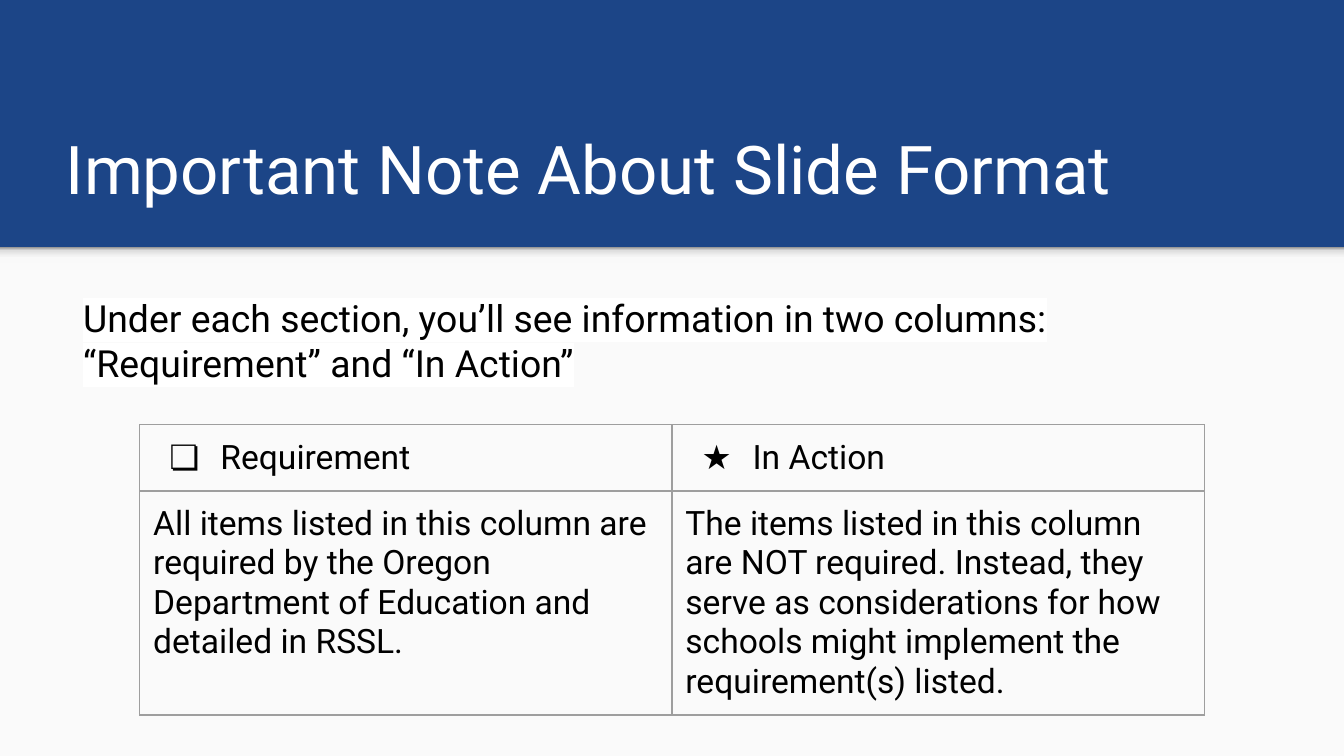
from dataclasses import dataclass

from lxml import etree
from pptx import Presentation
from pptx.dml.color import RGBColor
from pptx.enum.shapes import MSO_SHAPE
from pptx.enum.text import MSO_ANCHOR, MSO_AUTO_SIZE, PP_ALIGN
from pptx.oxml.ns import qn
from pptx.util import Inches, Pt

RECT = MSO_SHAPE.RECTANGLE
TOP, BOTTOM = MSO_ANCHOR.TOP, MSO_ANCHOR.BOTTOM
NO_FIT = MSO_AUTO_SIZE.NONE
LEFT = PP_ALIGN.LEFT


@dataclass(frozen=True)
class Theme:
    """Colours, font and sizes of the slide."""
    font: str = "Roboto"
    band: str = "1C4587"
    panel: str = "FAFAFA"
    white: str = "FFFFFF"
    black: str = "000000"
    border: str = "9E9E9E"
    shade: tuple = ((0, "F9F9F9"), (36, "F9F9F9"), (80, "DEDEDE"), (100, "999999"))
    title: int = 36
    body: int = 20
    cell: int = 18
    rule: float = 0.75
    inset: float = 0.1


THEME = Theme()
WIDTH = 10
HEIGHT = WIDTH * 9 / 16
TITLE = "Important Note About Slide Format"
INTRO = ("Under each section, you’ll see information in two columns: "
         "“Requirement” and “In Action”")
COLUMNS = [
    ("❏", "Requirement",
     "All items listed in this column are required by the Oregon Department of "
     "Education and detailed in RSSL."),
    ("★", "In Action",
     "The items listed in this column are NOT required. Instead, they serve as "
     "considerations for how schools might implement the requirement(s) listed."),
]


def set_attrs(obj, values):
    """Set every attribute named in values on obj."""
    for name, value in values.items():
        setattr(obj, name, value)


def add_node(parent, tag, **attrs):
    """Append a DrawingML element and return it."""
    return etree.SubElement(parent, qn(tag), attrs)


def add_solid(parent, tag, color):
    """Append a colour holder such as a:solidFill and return it."""
    node = add_node(parent, tag)
    add_node(node, "a:srgbClr", val=color)
    return node


def write_text(tf, text, size, color):
    """Write one left-aligned paragraph and return it with its run."""
    p = tf.paragraphs[0]
    p.alignment = LEFT
    r = p.add_run()
    r.text = text
    set_attrs(r.font, {"size": Pt(size), "name": THEME.font, "bold": False})
    r.font.color.rgb = RGBColor.from_string(color)
    return p, r


def format_frame(tf, anchor):
    """Give a text frame its insets, wrapping and anchor."""
    pad = Inches(THEME.inset)
    set_attrs(tf, {"word_wrap": True, "auto_size": NO_FIT, "vertical_anchor": anchor,
                   "margin_left": pad, "margin_right": pad,
                   "margin_top": pad, "margin_bottom": pad})


def add_rect(s, box):
    """Add a rectangle without line or shadow."""
    sp = s.shapes.add_shape(RECT, *map(Inches, box))
    sp.shadow.inherit = False
    sp.line.fill.background()
    return sp


def add_panel(s, box, shade_height):
    """Add the light content panel and the shaded strip along its top."""
    sp = add_rect(s, box)
    sp.fill.solid()
    sp.fill.fore_color.rgb = RGBColor.from_string(THEME.panel)
    left, top, width, _ = box
    strip = add_rect(s, (left, top, width, shade_height))
    strip.fill.gradient()
    strip.fill.gradient_angle = 90
    stops = strip.fill._fill._gradFill.find(qn("a:gsLst"))
    for stop in list(stops):
        stops.remove(stop)
    for pos, color in THEME.shade:
        stop = add_node(stops, "a:gs", pos=str(pos * 1000))
        add_node(stop, "a:srgbClr", val=color)


def add_title(s, box):
    """Place and fill the title placeholder."""
    sp = s.shapes.title
    set_attrs(sp, dict(zip(("left", "top", "width", "height"), map(Inches, box))))
    format_frame(sp.text_frame, BOTTOM)
    write_text(sp.text_frame, TITLE, THEME.title, THEME.white)


def add_intro(s, box):
    """Add the highlighted introduction."""
    tf = s.shapes.add_textbox(*map(Inches, box)).text_frame
    format_frame(tf, TOP)
    _, r = write_text(tf, INTRO, THEME.body, THEME.black)
    rpr = r.font._element
    rpr.find(qn("a:solidFill")).addnext(add_solid(rpr, "a:highlight", THEME.white))


def add_bullet(p, char):
    """Give a paragraph a hanging bullet."""
    ppr = p._p.get_or_add_pPr()
    ppr.set("marL", str(Inches(0.5)))
    ppr.set("indent", str(Inches(-0.38)))
    add_solid(ppr, "a:buClr", THEME.black)
    add_node(ppr, "a:buFont", typeface=THEME.font)
    add_node(ppr, "a:buChar", char=char)


def format_cell(cell):
    """Give a cell its insets, clear fill and thin borders."""
    pad = Inches(THEME.inset)
    set_attrs(cell, {"margin_left": pad, "margin_right": pad, "margin_top": pad,
                     "margin_bottom": pad, "vertical_anchor": TOP})
    tcpr = cell._tc.get_or_add_tcPr()
    for side in "LRTB":
        line = add_node(tcpr, f"a:ln{side}", w=str(Pt(THEME.rule)))
        add_solid(line, "a:solidFill", THEME.border)
    cell.fill.background()


def add_columns(s, box, row_height):
    """Add the table that explains the two columns."""
    frame = s.shapes.add_table(2, len(COLUMNS), *map(Inches, box))
    table = frame.table
    set_attrs(table, {"first_row": False, "horz_banding": False})
    for row in table.rows:
        row.height = Inches(row_height)
    frame.height = Inches(box[3])
    for col, (char, heading, detail) in enumerate(COLUMNS):
        table.columns[col].width = Inches(box[2] / len(COLUMNS))
        for row, text in enumerate((heading, detail)):
            cell = table.cell(row, col)
            format_cell(cell)
            p, _ = write_text(cell.text_frame, text, THEME.cell, THEME.black)
            if row == 0:
                add_bullet(p, char)


def add_note_slide(prs):
    """Build the slide on the slide format."""
    s = prs.slides.add_slide(prs.slide_layouts[5])
    s.background.fill.solid()
    s.background.fill.fore_color.rgb = RGBColor.from_string(THEME.band)
    add_panel(s, (0, 1.84, WIDTH, HEIGHT - 1.84), 0.12)
    add_title(s, (0.39, 0.81, 8.99, 0.84))
    add_intro(s, (0.52, 2.1, 8.99, 3.36))
    add_columns(s, (1.04, 3.16, 7.92, 2.2), 0.42)


def main():
    """Create and save the presentation."""
    prs = Presentation()
    set_attrs(prs, {"slide_width": Inches(WIDTH), "slide_height": Inches(HEIGHT)})
    add_note_slide(prs)
    prs.save("out.pptx")


if __name__ == "__main__":
    main()
